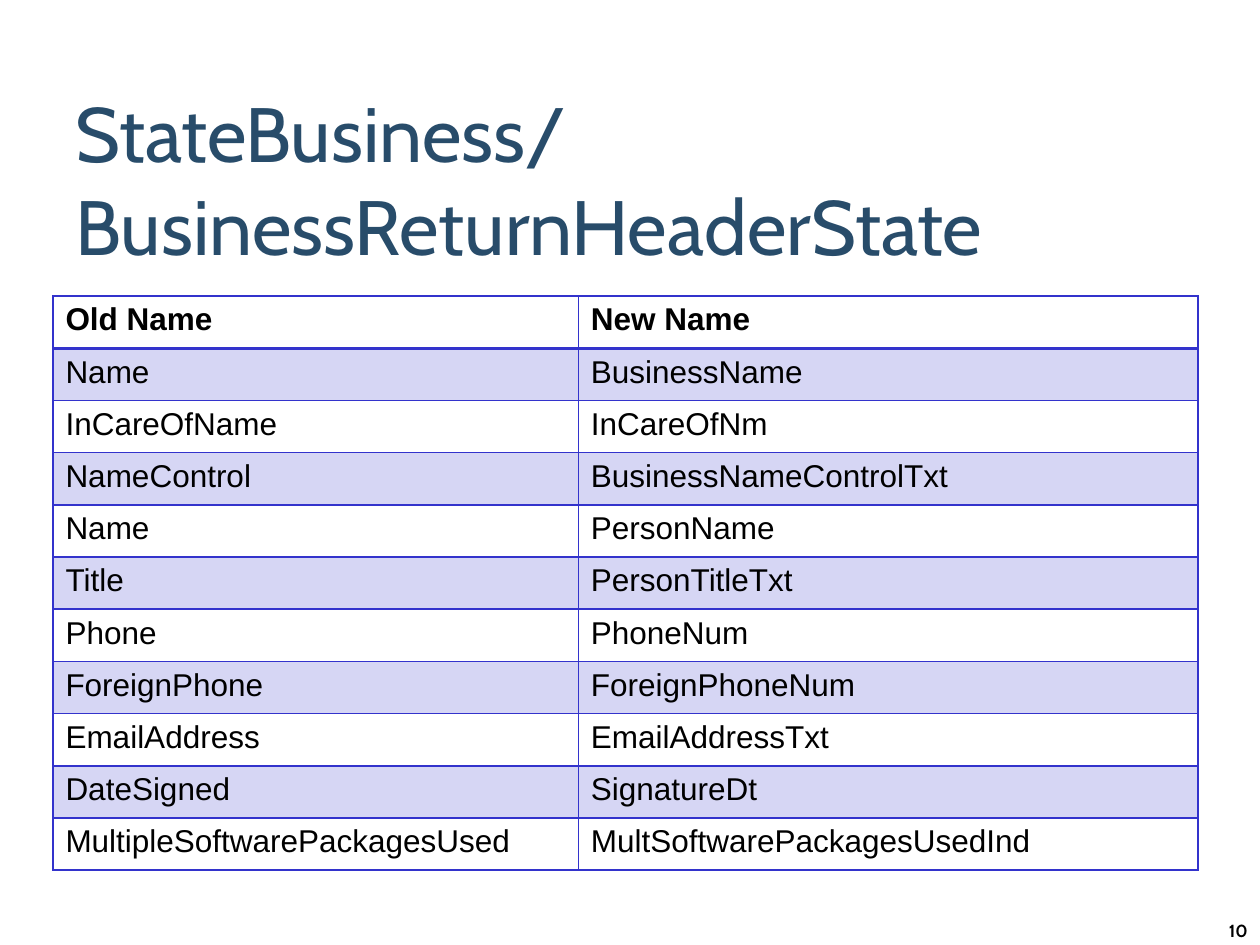
"""Build a slide with a table of old and new element names."""
from lxml import etree
from pptx import Presentation
from pptx.dml.color import RGBColor
from pptx.enum.text import MSO_ANCHOR, PP_ALIGN
from pptx.oxml.ns import qn
from pptx.util import Inches, Pt

TITLE = "StateBusiness/\vBusinessReturnHeaderState"
PAGE = "10"
ROWS = [
    ("Old Name", "New Name"),
    ("Name", "BusinessName"),
    ("InCareOfName", "InCareOfNm"),
    ("NameControl", "BusinessNameControlTxt"),
    ("Name", "PersonName"),
    ("Title", "PersonTitleTxt"),
    ("Phone", "PhoneNum"),
    ("ForeignPhone", "ForeignPhoneNum"),
    ("EmailAddress", "EmailAddressTxt"),
    ("DateSigned", "SignatureDt"),
    ("MultipleSoftwarePackagesUsed", "MultSoftwarePackagesUsedInd"),
]
COLS = (4.17, 4.92)
LEFT, TOP, HIGH = 0.42, 2.35, 4.56

NAVY = RGBColor(0x28, 0x4C, 0x6A)
BLUE = RGBColor(0x33, 0x33, 0xCC)
BLACK = RGBColor(0, 0, 0)
MIDDLE, UPPER = MSO_ANCHOR.MIDDLE, MSO_ANCHOR.TOP
START, END = PP_ALIGN.LEFT, PP_ALIGN.RIGHT


def style(para, name, size, color, bold=False):
    font = para.font
    font.name, font.size, font.bold = name, Pt(size), bold
    font.color.rgb = color


def add_text(slide, box, text, size, color, bold, align, anchor):
    frame = slide.shapes.add_textbox(*map(Inches, box)).text_frame
    frame.word_wrap = True
    frame.vertical_anchor = anchor
    para = frame.paragraphs[0]
    para.text, para.alignment = text, align
    style(para, "Cabin", size, color, bold)


def add_edge(cell, side, width):
    props = cell._tc.get_or_add_tcPr()
    line = etree.SubElement(props, qn(f"a:ln{side}"), w=str(Pt(width)))
    fill = etree.SubElement(line, qn("a:solidFill"))
    etree.SubElement(fill, qn("a:srgbClr"), val=str(BLUE))


def paint(cell, banded):
    if not banded:
        cell.fill.background()
        return
    cell.fill.solid()
    cell.fill.fore_color.rgb = BLUE
    tint = cell._tc.tcPr.find(qn("a:solidFill")).find(qn("a:srgbClr"))
    etree.SubElement(tint, qn("a:alpha"), val="20000")


def add_names(slide):
    box = map(Inches, (LEFT, TOP, sum(COLS), HIGH))
    table = slide.shapes.add_table(len(ROWS), len(COLS), *box).table
    for col, width in zip(table.columns, COLS):
        col.width = Inches(width)
    for r, row in enumerate(ROWS):
        table.rows[r].height = Inches(HIGH / len(ROWS))
        for c, text in enumerate(row):
            cell = table.cell(r, c)
            para = cell.text_frame.paragraphs[0]
            para.text = text
            style(para, "Arial", 18, BLACK, r == 0)
            for side in "LRTB":
                rule = (r, side) in ((0, "B"), (1, "T"))
                add_edge(cell, side, 2 if rule else 1)
            paint(cell, r % 2 == 1)


def main():
    deck = Presentation()
    deck.slide_width, deck.slide_height = Inches(10), Inches(7.5)
    slide = deck.slides.add_slide(deck.slide_layouts[6])
    add_text(slide, (0.5, 0.75, 8.83, 1.33), TITLE, 44, NAVY, False, START, MIDDLE)
    add_text(slide, (7.92, 7.25, 2.08, 0.25), PAGE, 10, BLACK, True, END, UPPER)
    add_names(slide)
    deck.save("out.pptx")


if __name__ == "__main__":
    main()
